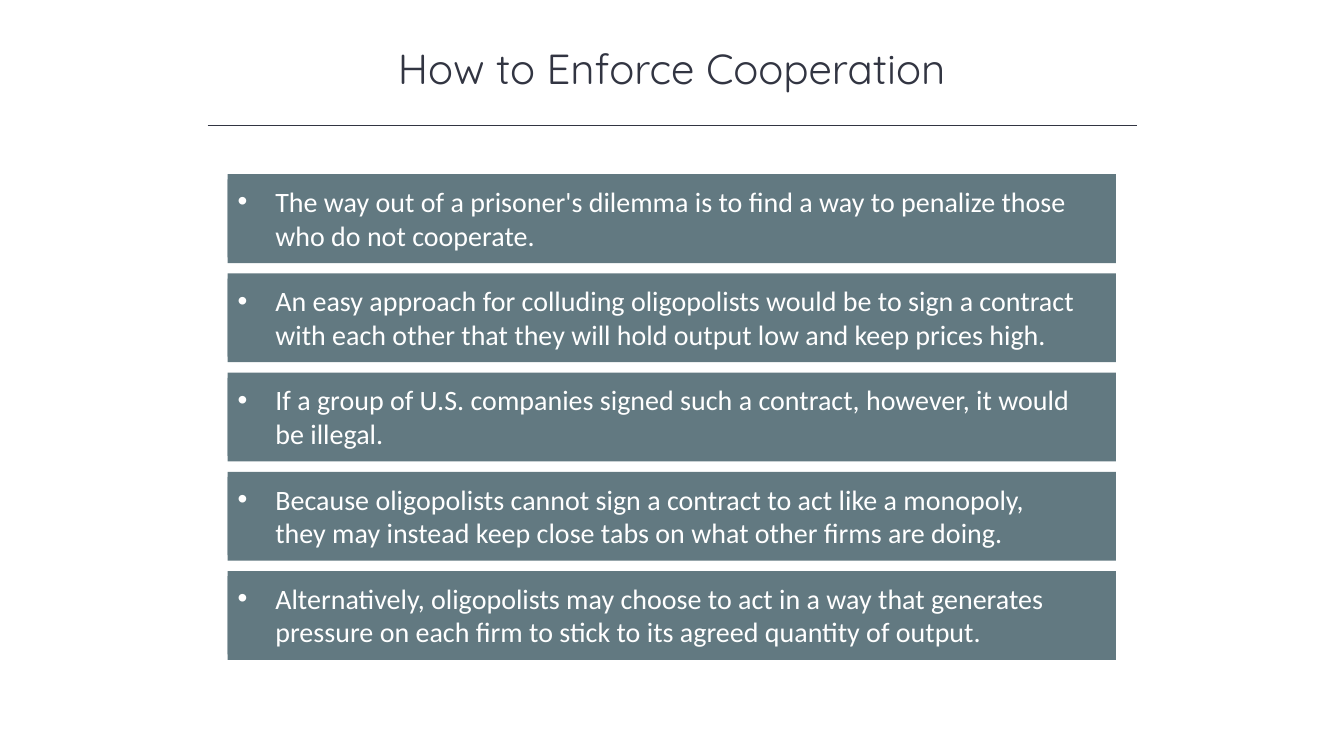
"""Build the slide on how oligopolists enforce cooperation."""
from dataclasses import dataclass

from lxml.etree import SubElement
from pptx import Presentation
from pptx.dml.color import RGBColor
from pptx.enum.shapes import MSO_CONNECTOR as Link, MSO_SHAPE as Form
from pptx.enum.text import MSO_ANCHOR as Anchor, MSO_AUTO_SIZE as Fit, PP_ALIGN as Align
from pptx.oxml.ns import qn
from pptx.util import Cm, Pt

INK = RGBColor(0x32, 0x35, 0x42)
SLATE = RGBColor(0x62, 0x79, 0x81)
WHITE = RGBColor(0xFF, 0xFF, 0xFF)
LEFT, TOP, PITCH = 5.74, 4.39, 2.5
INSET, INDENT = 0.13, 0.95


@dataclass(frozen=True)
class Box:
    left: float
    top: float
    width: float
    height: float


POINTS = (
    "The way out of a prisoner's dilemma is to find a way to penalize those who do not cooperate.",
    "An easy approach for colluding oligopolists would be to sign a contract with each other "
    "that they will hold output low and keep prices high.",
    "If a group of U.S. companies signed such a contract, however, it would be illegal.",
    "Because oligopolists cannot sign a contract to act like a monopoly, they may instead "
    "keep close tabs on what other firms are doing.",
    "Alternatively, oligopolists may choose to act in a way that generates pressure on each "
    "firm to stick to its agreed quantity of output.",
)


def write(shape, text: str, *, font: str, size: float, color: RGBColor,
          align: Align = Align.LEFT, bullet: bool = False) -> None:
    frame = shape.text_frame
    frame.word_wrap = True
    frame.auto_size = Fit.SHAPE_TO_FIT_TEXT
    frame.vertical_anchor = Anchor.TOP
    frame.margin_left = frame.margin_right = Cm(0.25)
    frame.margin_top = frame.margin_bottom = Cm(0.13)
    para = frame.paragraphs[0]
    para.alignment = align
    para.line_spacing = 1.0
    para.space_before = Pt(0)
    run = para.add_run()
    run.text = text
    run.font.name = font
    run.font.size = Pt(size)
    run.font.color.rgb = color
    if bullet:
        props = para._p.get_or_add_pPr()
        props.set("marL", str(Cm(INDENT)))
        props.set("indent", str(-Cm(INDENT)))
        SubElement(props, qn("a:buFont"), typeface="Arial")
        SubElement(props, qn("a:buChar"), char="•")


def add_rect(group, box: Box):
    rect = group.shapes.add_shape(
        Form.RECTANGLE, Cm(box.left), Cm(box.top), Cm(box.width), Cm(box.height))
    rect.shadow.inherit = False
    rect.fill.solid()
    rect.fill.fore_color.rgb = SLATE
    rect.line.fill.background()
    return rect


def add_point(slide, text: str, top: float) -> None:
    group = slide.shapes.add_group_shape()
    add_rect(group, Box(LEFT, top, 22.38, 2.24))
    label = add_rect(group, Box(LEFT, top + INSET, 21.69, 1.97))
    write(label, text, font="Calibri", size=20, color=WHITE, bullet=True)


def add_title(slide, text: str) -> None:
    title = slide.shapes.title
    title.left, title.top, title.width, title.height = Cm(4.23), Cm(0.94), Cm(25.4), Cm(1.54)
    write(title, text, font="Quicksand", size=30, color=INK, align=Align.CENTER)


def add_rule(slide) -> None:
    rule = slide.shapes.add_connector(Link.STRAIGHT, Cm(5.23), Cm(3.16), Cm(28.65), Cm(3.16))
    rule.line.color.rgb = INK
    rule.line.width = Pt(1)
    SubElement(rule._element.spPr, qn("a:effectLst"))


def main() -> None:
    deck = Presentation()
    deck.slide_width, deck.slide_height = Cm(33.87), Cm(19.05)
    slide = deck.slides.add_slide(deck.slide_layouts[5])
    add_title(slide, "How to Enforce Cooperation")
    add_rule(slide)
    for row, text in enumerate(POINTS):
        add_point(slide, text, TOP + row * PITCH)
    deck.save("out.pptx")


if __name__ == "__main__":
    main()
